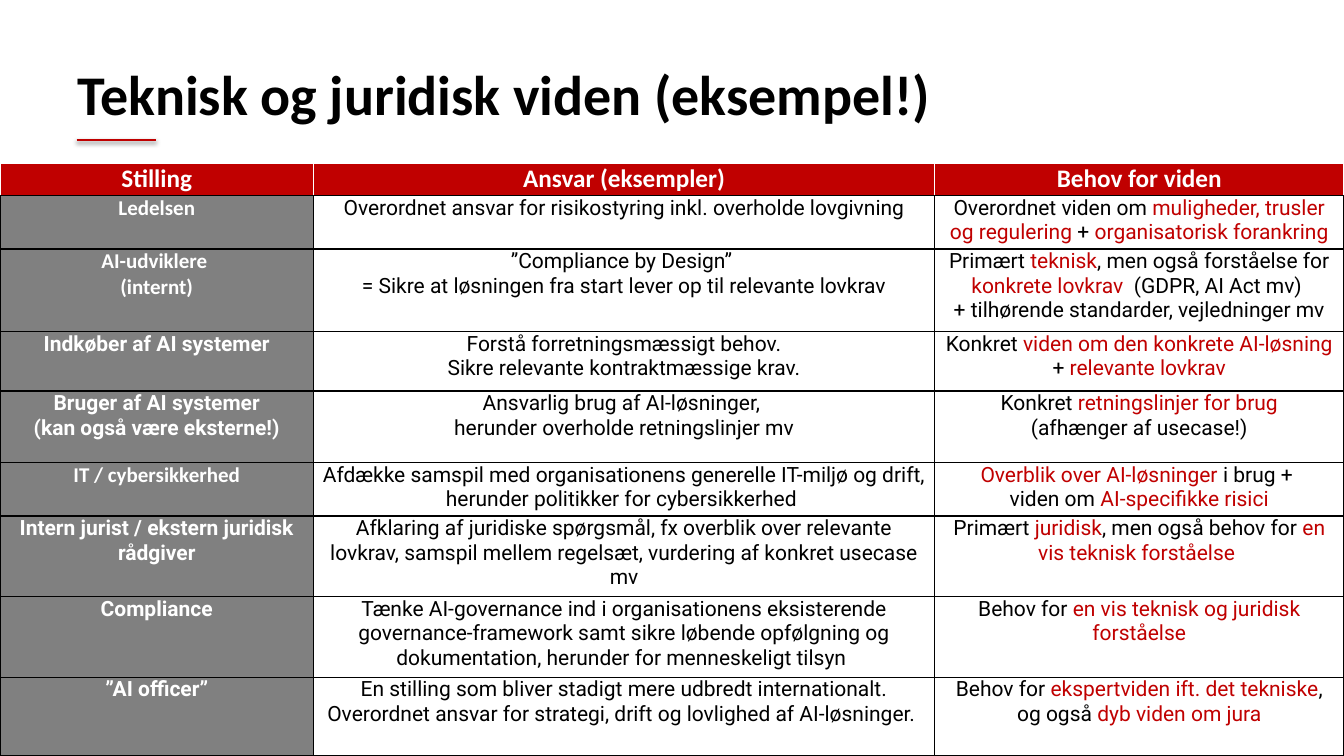
from lxml import etree
from pptx import Presentation
from pptx import util as u
from pptx.dml.color import RGBColor
from pptx.enum import shapes, text
from pptx.oxml import ns

RED = RGBColor(0xC0, 0x00, 0x00)
GREY = RGBColor(0x80, 0x80, 0x80)
BLACK = RGBColor(0x00, 0x00, 0x00)
WHITE = RGBColor(0xFF, 0xFF, 0xFF)

HEAD = ["Stilling", "Ansvar (eksempler)", "Behov for viden"]
WIDTHS = [3.11, 6.16, 4.06]
HEIGHTS = [0.32, 0.53, 0.82, 0.59, 0.71, 0.53, 0.8, 0.8, 0.78]
ROLES = [
    ("Calibri", "Ledelsen",
     "Overordnet ansvar for risikostyring inkl. overholde lovgivning",
     "Overordnet viden om *muligheder, trusler og regulering* + *organisatorisk forankring*"),
    ("Calibri", "AI-udviklere \n(internt)",
     "”Compliance by Design” \n= Sikre at løsningen fra start lever op til relevante lovkrav",
     "Primært *teknisk*, men også forståelse for *konkrete lovkrav  *(GDPR, AI Act mv) \n"
     "+ tilhørende standarder, vejledninger mv"),
    ("Roboto", "Indkøber af AI systemer",
     "Forstå forretningsmæssigt behov.\nSikre relevante kontraktmæssige krav.",
     "Konkret *viden om den konkrete AI-løsning *+ *relevante lovkrav*"),
    ("Roboto", "Bruger af AI systemer\n(kan også være eksterne!)",
     "Ansvarlig brug af AI-løsninger, \nherunder overholde retningslinjer mv",
     "Konkret *retningslinjer for brug*\n(afhænger af usecase!)"),
    ("Calibri", "IT / cybersikkerhed",
     "Afdække samspil med organisationens generelle IT-miljø og drift, "
     "herunder politikker for cybersikkerhed ",
     "*Overblik over AI-løsninger *i brug + \nviden om *AI-specifikke risici*"),
    ("Roboto", "Intern jurist / ekstern juridisk rådgiver",
     "Afklaring af juridiske spørgsmål, fx overblik over relevante lovkrav, "
     "samspil mellem regelsæt, vurdering af konkret usecase mv",
     "Primært *juridisk*, men også behov for *en vis teknisk forståelse *"),
    ("Roboto", "Compliance",
     "Tænke AI-governance ind i organisationens eksisterende governance-framework "
     "samt sikre løbende opfølgning og dokumentation, herunder for menneskeligt tilsyn ",
     "Behov for *en vis teknisk og juridisk forståelse*"),
    ("Roboto", "”AI officer”",
     "En stilling som bliver stadigt mere udbredt internationalt. "
     "Overordnet ansvar for strategi, drift og lovlighed af AI-løsninger. ",
     "Behov for *ekspertviden ift. det tekniske*, og også *dyb viden om jura*"),
]


class Deck:
    """Hold the style and current slide, and add each kind of element."""

    def __init__(self):
        self.prs = Presentation()
        self.prs.slide_width = u.Inches(13.33)
        self.prs.slide_height = u.Inches(7.5)
        self.slide = self.prs.slides.add_slide(self.prs.slide_layouts[6])

    def fill_text(self, frame, words, face, size, color, bold, align):
        for i, line in enumerate(words.split("\n")):
            para = frame.add_paragraph() if i else frame.paragraphs[0]
            para.alignment = align
            font = para.font
            font.name, font.size, font.bold = face, u.Pt(size), bold
            font.color.rgb = color
            for j, part in enumerate(line.split("*")):
                if part:
                    run = para.add_run()
                    run.text = part
                    if j % 2:
                        run.font.color.rgb = RED

    def title(self, words):
        box = self.slide.shapes.add_textbox(
            u.Inches(0.67), u.Inches(0.3), u.Inches(12), u.Inches(1.25))
        frame = box.text_frame
        frame.word_wrap = True
        frame.vertical_anchor = text.MSO_ANCHOR.MIDDLE
        self.fill_text(frame, words, "Calibri", 40, BLACK, True,
                       text.PP_ALIGN.JUSTIFY)

    def rule(self, left, right, top):
        line = self.slide.shapes.add_connector(
            shapes.MSO_CONNECTOR.STRAIGHT,
            u.Inches(left), u.Inches(top), u.Inches(right), u.Inches(top))
        line.line.color.rgb = RED
        line.line.width = u.Pt(2)
        props = line._element.spPr
        effect = etree.SubElement(props, ns.qn("a:effectLst"))
        shadow = etree.SubElement(effect, ns.qn("a:outerShdw"), blurRad="40000",
                                  dist="20000", dir="5400000", rotWithShape="0")
        tint = etree.SubElement(shadow, ns.qn("a:srgbClr"), val=str(BLACK))
        etree.SubElement(tint, ns.qn("a:alpha"), val="38000")

    def border(self, cell, sides):
        props = cell._tc.get_or_add_tcPr()
        for i, (side, color) in enumerate(sides.items()):
            edge = etree.Element(ns.qn("a:ln" + side), w=str(u.Pt(1)))
            fill = etree.SubElement(edge, ns.qn("a:solidFill"))
            etree.SubElement(fill, ns.qn("a:srgbClr"), val=str(color))
            props.insert(i, edge)

    def cell(self, cell, words, face, size, color, bold, fill, edge):
        cell.margin_left = cell.margin_right = u.Inches(0.07)
        cell.margin_top = cell.margin_bottom = 0
        cell.fill.solid()
        cell.fill.fore_color.rgb = fill
        self.border(cell, {"L": edge, "R": edge, "T": edge, "B": BLACK})
        self.fill_text(cell.text_frame, words, face, size, color, bold,
                       text.PP_ALIGN.CENTER)

    def table(self, head, roles, widths, heights):
        grid = self.slide.shapes.add_table(
            len(heights), len(widths), 0, u.Inches(1.62),
            u.Inches(sum(widths)), u.Inches(sum(heights))).table
        for col, width in zip(grid.columns, widths):
            col.width = u.Inches(width)
        for row, height in zip(grid.rows, heights):
            row.height = u.Inches(height)
        for c, words in enumerate(head):
            self.cell(grid.cell(0, c), words, "Calibri", 18, WHITE, True, RED, WHITE)
        for r, (face, role, *rest) in enumerate(roles, 1):
            self.cell(grid.cell(r, 0), role, face, 15, WHITE, True, GREY, BLACK)
            for c, words in enumerate(rest, 1):
                self.cell(grid.cell(r, c), words, "Roboto", 15, BLACK, False,
                          WHITE, BLACK)


def main():
    deck = Deck()
    deck.title("Teknisk og juridisk viden (eksempel!)")
    deck.rule(0.76, 1.55, 1.39)
    deck.table(HEAD, ROLES, WIDTHS, HEIGHTS)
    deck.prs.save("out.pptx")


if __name__ == "__main__":
    main()
